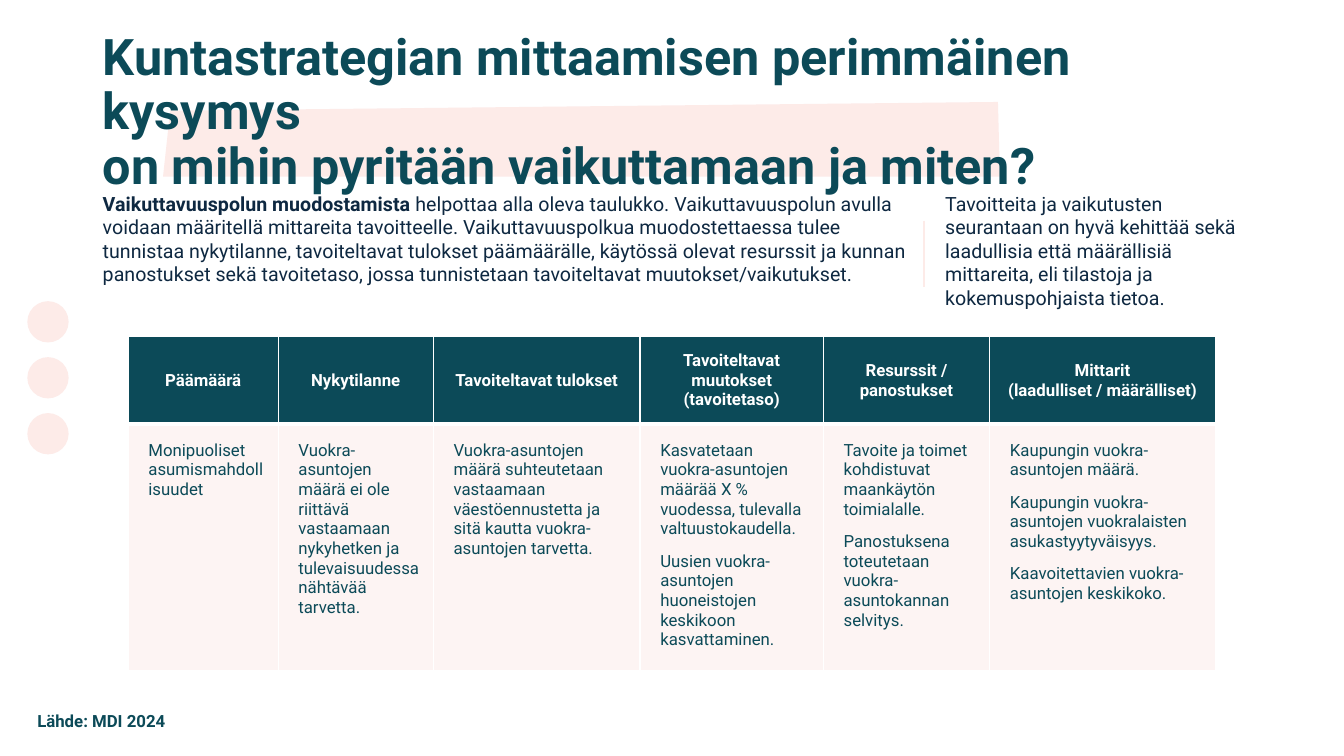
from lxml import etree
from pptx import Presentation
from pptx.dml.color import RGBColor
from pptx.enum.shapes import MSO_CONNECTOR as Connector, MSO_SHAPE as Shape
from pptx.enum.text import MSO_ANCHOR as Anchor, PP_ALIGN as Align
from pptx.oxml.ns import qn
from pptx.util import Cm, Pt

TEAL, NAVY, BLUSH, WHITE = "0C4A58", "0E2841", "FDEBE8", "FFFFFF"

HEADINGS = [
    "Päämäärä",
    "Nykytilanne",
    "Tavoiteltavat tulokset",
    "Tavoiteltavat muutokset (tavoitetaso)",
    "Resurssit /\npanostukset",
    "Mittarit\n(laadulliset / määrälliset)",
]
PATHWAY = [
    ["Monipuoliset asumismahdollisuudet"],
    ["Vuokra-asuntojen määrä ei ole riittävä vastaamaan nykyhetken ja "
     "tulevaisuudessa nähtävää tarvetta."],
    ["Vuokra-asuntojen määrä suhteutetaan vastaamaan väestöennustetta ja sitä "
     "kautta vuokra-asuntojen tarvetta."],
    ["Kasvatetaan vuokra-asuntojen määrää X % vuodessa, tulevalla valtuustokaudella.",
     "Uusien vuokra-asuntojen huoneistojen keskikoon kasvattaminen."],
    ["Tavoite ja toimet kohdistuvat maankäytön toimialalle.",
     "Panostuksena toteutetaan vuokra-asuntokannan selvitys."],
    ["Kaupungin vuokra-asuntojen määrä.",
     "Kaupungin vuokra-asuntojen vuokralaisten asukastyytyväisyys.",
     "Kaavoitettavien vuokra-asuntojen keskikoko."],
]
COLUMN_WIDTHS = [3.78, 3.91, 5.21, 4.62, 4.19, 5.69]
ROW_HEIGHTS = [2.21, 6.2]


def rgb(color):
    return RGBColor.from_string(color)


def write(frame, paragraphs, size=12, color=TEAL, bold=False, lead="",
          align=Align.LEFT, anchor=Anchor.TOP, line_spacing=None, space_after=0):
    """Fill a text frame; lead is a bold opening of the first paragraph."""
    frame.word_wrap = True
    frame.vertical_anchor = anchor
    for index, text in enumerate(paragraphs):
        paragraph = frame.paragraphs[0] if index == 0 else frame.add_paragraph()
        paragraph.alignment = align
        paragraph.line_spacing = line_spacing
        paragraph.space_after = Pt(space_after)
        if lead and index == 0:
            paragraph.add_run().text = lead
        for number, line in enumerate(text.split("\n")):
            if number:
                paragraph.add_line_break()
            paragraph.add_run().text = line
        for run in paragraph.runs:
            run.font.name = "Roboto"
            run.font.size = Pt(size)
            run.font.bold = bold or run.text == lead
            run.font.color.rgb = rgb(color)


def add_text(slide, left, top, width, height, *paragraphs, **text_format):
    box = slide.shapes.add_textbox(Cm(left), Cm(top), Cm(width), Cm(height))
    write(box.text_frame, paragraphs, **text_format)


def paint(shape, color):
    shape.shadow.inherit = False
    shape.fill.solid()
    shape.fill.fore_color.rgb = rgb(color)
    shape.line.fill.background()


def add_title(slide, left, top, width, height):
    """Place the heading over a slanted brush band."""
    corners = [(1.77, 3.43), (22.86, 3.43), (22.81, 1.55), (1.95, 1.77)]
    (start_x, start_y), *others = [(Cm(left + x), Cm(top + y)) for x, y in corners]
    outline = slide.shapes.build_freeform(start_x, start_y)
    outline.add_line_segments(others, close=True)
    paint(outline.convert_to_shape(), BLUSH)
    add_text(slide, left, top, width, height,
             "Kuntastrategian mittaamisen perimmäinen kysymys \n"
             "on mihin pyritään vaikuttamaan ja miten?",
             size=36, bold=True, anchor=Anchor.MIDDLE, line_spacing=0.9)


def add_intro(slide, left, top, width, height):
    """Place two columns of text with a thin divider between them."""
    main_width, side_width = 20.78, 8.43
    add_text(slide, left, top, main_width, height,
             " helpottaa alla oleva taulukko. Vaikuttavuuspolun avulla voidaan "
             "määritellä mittareita tavoitteelle. Vaikuttavuuspolkua muodostettaessa "
             "tulee tunnistaa nykytilanne, tavoiteltavat tulokset päämäärälle, "
             "käytössä olevat resurssit ja kunnan panostukset sekä tavoitetaso, "
             "jossa tunnistetaan tavoiteltavat muutokset/vaikutukset.",
             lead="Vaikuttavuuspolun muodostamista", size=14, color=NAVY)
    add_text(slide, left + width - side_width, top, side_width, height,
             "Tavoitteita ja vaikutusten seurantaan on hyvä kehittää sekä laadullisia "
             "että määrällisiä mittareita, eli tilastoja ja kokemuspohjaista tietoa.",
             size=14, color=NAVY)
    divider_x = Cm(left + main_width + 0.17)
    divider = slide.shapes.add_connector(
        Connector.STRAIGHT, divider_x, Cm(top + 0.86), divider_x, Cm(top + 2.54))
    divider.line.color.rgb = rgb(BLUSH)
    divider.line.width = Pt(1.5)
    etree.SubElement(divider._element.spPr, qn("a:effectLst"))


def style_cell(cell, color, opacity=100, **borders):
    """Fill a cell and draw white borders, given as side=points."""
    cell.fill.solid()
    cell.fill.fore_color.rgb = rgb(color)
    properties = cell._tc.get_or_add_tcPr()
    tint = properties.find(".//" + qn("a:srgbClr"))
    if opacity < 100:
        etree.SubElement(tint, qn("a:alpha"), val=str(opacity * 1000))
    for index, side in enumerate("LRTB"):
        border = etree.Element(qn("a:ln" + side), w=str(Pt(borders.get(side, 1))))
        fill = etree.SubElement(border, qn("a:solidFill"))
        etree.SubElement(fill, qn("a:srgbClr"), val=WHITE)
        properties.insert(index, border)


def add_pathway_table(slide, left, top):
    table = slide.shapes.add_table(
        len(ROW_HEIGHTS), len(COLUMN_WIDTHS), Cm(left), Cm(top),
        Cm(sum(COLUMN_WIDTHS)), Cm(sum(ROW_HEIGHTS))).table
    table.horz_banding = False
    for row, height in zip(table.rows, ROW_HEIGHTS):
        row.height = Cm(height)
    for index, width in enumerate(COLUMN_WIDTHS):
        table.columns[index].width = Cm(width)
        heading, content = table.cell(0, index), table.cell(1, index)
        write(heading.text_frame, [HEADINGS[index]], color=WHITE, bold=True,
              align=Align.CENTER)
        heading.vertical_anchor = Anchor.MIDDLE
        style_cell(heading, TEAL, B=3)
        write(content.text_frame, PATHWAY[index], space_after=9)
        content.margin_left, content.margin_top = Cm(0.51), Cm(0.41)
        content.margin_right, content.margin_bottom = Cm(0.3), Cm(0.13)
        style_cell(content, BLUSH, opacity=50, T=3)


def add_dots(slide, left, top, diameter, pitch, count=3):
    for index in range(count):
        dot = slide.shapes.add_shape(
            Shape.OVAL, Cm(left), Cm(top + index * pitch), Cm(diameter), Cm(diameter))
        paint(dot, BLUSH)


def main():
    deck = Presentation()
    deck.slide_width, deck.slide_height = Cm(33.87), Cm(19.05)
    slide = deck.slides.add_slide(deck.slide_layouts[6])
    add_title(slide, 2.34, 1.02, 29.21, 3.68)
    add_intro(slide, 2.34, 4.7, 29.66, 4.7)
    add_pathway_table(slide, 3.23, 8.48)
    add_text(slide, 0.69, 17.78, 4.5, 0.76, "Lähde: MDI 2024", bold=True)
    add_dots(slide, 0.69, 7.59, diameter=1.04, pitch=1.41)
    deck.save("out.pptx")


if __name__ == "__main__":
    main()
